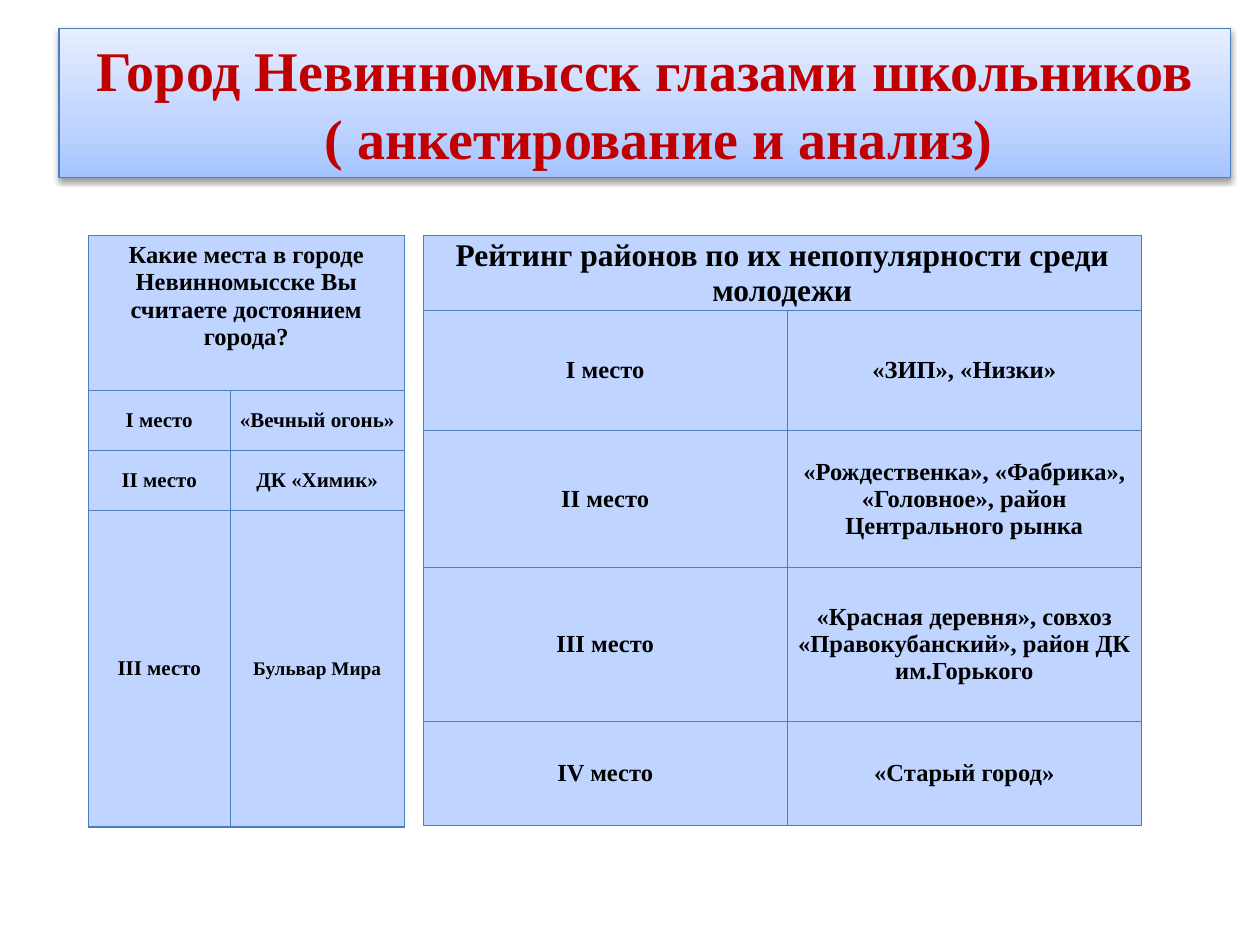
"""Build a slide with a gradient title and two survey ranking tables."""
import pptx
import pptx.util
import pptx.dml.color
import pptx.enum.shapes
import pptx.enum.text
import pptx.oxml
import pptx.oxml.ns

Cm, Pt = pptx.util.Cm, pptx.util.Pt
COLORS = {"title": "C00000", "text": "000000", "line": "4B7EBC", "cell": "BFD4FF",
          "grad_low": "A4C4FF", "grad_high": "E6EEFF"}
FONT = "Times New Roman"
NS = pptx.oxml.ns.nsdecls("a")


def rgb(name):
    return pptx.dml.color.RGBColor.from_string(COLORS[name])


def style(p, size, color):
    p.alignment = pptx.enum.text.PP_ALIGN.CENTER
    p.font.name, p.font.size, p.font.bold = FONT, Pt(size), True
    p.font.color.rgb = rgb(color)


prs = pptx.Presentation()
prs.slide_width, prs.slide_height = Cm(25.4), Cm(19.05)
s = prs.slides.add_slide(prs.slide_layouts[6])

sp = s.shapes.add_shape(pptx.enum.shapes.MSO_SHAPE.RECTANGLE, Cm(1.19), Cm(0.58), Cm(23.62), Cm(3))
sp.fill.gradient()
sp.fill.gradient_angle = 90
stops = sp._element.spPr.find(".//" + pptx.oxml.ns.qn("a:gsLst"))
stops.clear()
for pos, name in [(0, "grad_low"), (35, "cell"), (100, "grad_high")]:
    stops.append(pptx.oxml.parse_xml(
        f'<a:gs {NS} pos="{pos * 1000}"><a:srgbClr val="{COLORS[name]}"/></a:gs>'))
sp.line.color.rgb = rgb("line")
sp.line.width = Pt(0.75)
sp.shadow.inherit = False
sp._element.spPr.find(pptx.oxml.ns.qn("a:effectLst")).append(pptx.oxml.parse_xml(
    f'<a:outerShdw {NS} blurRad="{Pt(3.1)}" dist="{Pt(1.6)}" dir="5400000" rotWithShape="0">'
    f'<a:srgbClr val="{COLORS["text"]}"><a:alpha val="38000"/></a:srgbClr></a:outerShdw>'))
tf = sp.text_frame
tf.word_wrap = True
tf.vertical_anchor = pptx.enum.text.MSO_ANCHOR.MIDDLE
tf.text = "Город Невинномысск глазами школьников\n( анкетирование и анализ)"
for p in tf.paragraphs:
    style(p, 32, "title")
tf.paragraphs[1]._p.get_or_add_pPr().set("marL", str(Cm(0.56)))

TABLES = [
    {"left": 1.78, "cols": [2.86, 3.51], "rows": [3.12, 1.21, 1.21, 6.38],
     "head": ("Какие места в городе Невинномысске Вы считаете достоянием города?", 14),
     "head_anchor": "TOP", "head_top": 0.13,
     "body": [("I место", 12, "«Вечный огонь»", 12),
              ("II место", 12, "ДК «Химик»", 12),
              ("III место", 12, "Бульвар Мира", 11)]},
    {"left": 8.53, "cols": [7.34, 7.14], "rows": [1.51, 2.42, 2.76, 3.1, 2.1],
     "head": ("Рейтинг районов по их непопулярности среди молодежи", 18),
     "head_anchor": "MIDDLE", "head_top": 0,
     "body": [("I место", 14, "«ЗИП», «Низки»", 14),
              ("II место", 14, "«Рождественка», «Фабрика», «Головное», район Центрального рынка", 14),
              ("III место", 14, "«Красная деревня», совхоз «Правокубанский», район ДК им.Горького", 14),
              ("IV место", 14, "«Старый город»", 14)]},
]

for t in TABLES:
    tbl = s.shapes.add_table(len(t["rows"]), 2, Cm(t["left"]), Cm(4.75),
                             Cm(sum(t["cols"])), Cm(sum(t["rows"]))).table
    tbl.first_row = tbl.horz_banding = False
    for col, width in zip(tbl.columns, t["cols"]):
        col.width = Cm(width)
    for row, height in zip(tbl.rows, t["rows"]):
        row.height = Cm(height)
    for cell in tbl.iter_cells():
        for side in "LRTB":
            cell._tc.get_or_add_tcPr().append(pptx.oxml.parse_xml(
                f'<a:ln{side} {NS} w="{Pt(0.75)}"><a:solidFill><a:srgbClr val="{COLORS["line"]}"/>'
                f'</a:solidFill></a:ln{side}>'))
        cell.fill.solid()
        cell.fill.fore_color.rgb = rgb("cell")
        cell.vertical_anchor = pptx.enum.text.MSO_ANCHOR.MIDDLE
        cell.margin_left = cell.margin_right = Cm(0.18)
        cell.margin_top = cell.margin_bottom = 0
    head = tbl.cell(0, 0)
    head.merge(tbl.cell(0, 1))
    head.vertical_anchor = pptx.enum.text.MSO_ANCHOR[t["head_anchor"]]
    head.margin_top = Cm(t["head_top"])
    entries = [(head, *t["head"])]
    for i, (place, place_size, name, name_size) in enumerate(t["body"], 1):
        entries += [(tbl.cell(i, 0), place, place_size), (tbl.cell(i, 1), name, name_size)]
    for cell, text, size in entries:
        cell.text = text
        style(cell.text_frame.paragraphs[0], size, "text")

prs.save("out.pptx")
